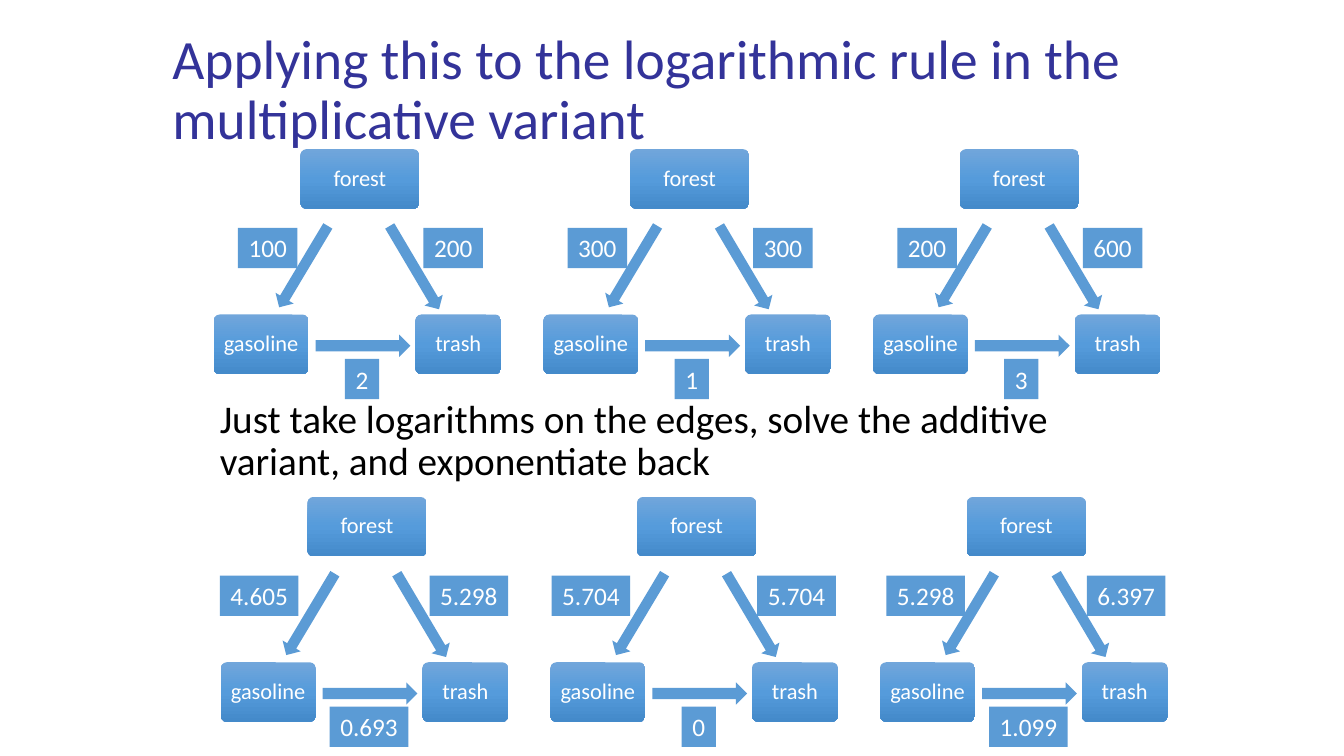
from copy import deepcopy
from dataclasses import dataclass

from pptx import Presentation
from pptx.dml.color import RGBColor as RGB
from pptx.enum.shapes import MSO_SHAPE as Shape
from pptx.enum.text import MSO_ANCHOR as Anchor, MSO_AUTO_SIZE as AutoSize, PP_ALIGN as Align
from pptx.oxml.ns import qn
from pptx.util import Inches, Pt


@dataclass(frozen=True)
class Theme:
    font: str = "Calibri"
    heading: RGB = RGB(0x33, 0x33, 0x99)
    ink: RGB = RGB(0, 0, 0)
    light: RGB = RGB(0xFF, 0xFF, 0xFF)
    blue: RGB = RGB(0x5B, 0x9B, 0xD5)
    gradient: tuple = (
        (0, RGB(0x71, 0xA6, 0xDB)),
        (0.5, RGB(0x55, 0x9B, 0xDB)),
        (1, RGB(0x44, 0x8A, 0xCA)),
    )
    heading_size: float = 39.6
    body_size: float = 28
    weight_size: float = 18
    node_size: float = 16


THEME = Theme()
PITCH = 3.27
WEIGHT_WIDTHS = {1: 0.34, 3: 0.59, 5: 0.78}
NODES = (
    ("forest", 0.86, 0, 1.18),
    ("trash", 2, 1.64, 0.85),
    ("gasoline", 0, 1.64, 0.94),
)
EDGES = (
    (1.51, 1.07, 0.96, 0.21, 59.4),
    (1.01, 1.84, 0.94, 0.22, 0),
    (0.42, 1.06, 0.94, 0.21, 120.9),
)
ROWS = (
    (2.12, 1.48, (
        (("100", 0.24), ("200", 2.08), "2"),
        (("300", 0.24), ("300", 2.08), "1"),
        (("200", 0.24), ("600", 2.08), "3"),
    )),
    (2.19, 4.93, (
        (("4.605", -0.01), ("5.298", 2.07), "0.693"),
        (("5.704", 0.01), ("5.704", 2.05), "0"),
        (("5.298", 0.06), ("6.397", 2.05), "1.099"),
    )),
)


def write(frame, text, size, color, align=Align.LEFT, anchor=Anchor.MIDDLE, inset=0, spacing=0.9):
    frame.text = text
    frame.auto_size = AutoSize.NONE
    frame.vertical_anchor = anchor
    frame.margin_left = frame.margin_right = Inches(inset)
    frame.margin_top = frame.margin_bottom = Inches(min(inset, 0.05))
    paragraph = frame.paragraphs[0]
    paragraph.alignment = align
    paragraph.line_spacing = spacing
    font = paragraph.runs[0].font
    font.name, font.size, font.color.rgb = THEME.font, Pt(size), color


def add_plain(slide, kind, left, top, width, height):
    plain = slide.shapes.add_shape(kind, Inches(left), Inches(top), Inches(width), Inches(height))
    plain.shadow.inherit = False
    plain.line.fill.background()
    plain.fill.solid()
    plain.fill.fore_color.rgb = THEME.blue
    return plain


def add_node(slide, name, left, top, width):
    node = add_plain(slide, Shape.ROUNDED_RECTANGLE, left, top, width, 0.59)
    node.adjustments[0] = 0.1
    node.fill.gradient()
    node.fill.gradient_angle = 270
    stops = node._element.spPr.find(".//" + qn("a:gsLst"))
    stops.append(deepcopy(stops[-1]))
    for stop, (position, color) in zip(node.fill.gradient_stops, THEME.gradient):
        stop.position, stop.color.rgb = position, color
    node.text_frame.word_wrap = False
    write(node.text_frame, name, THEME.node_size, THEME.light, Align.CENTER, inset=0.07)


def add_weight(slide, value, left, top):
    weight = add_plain(slide, Shape.RECTANGLE, left, top, WEIGHT_WIDTHS[len(value)], 0.4)
    weight.text_frame.word_wrap = False
    write(weight.text_frame, value, THEME.weight_size, THEME.light,
          Align.CENTER, inset=0.1, spacing=1)


def add_triangle(slide, left, top, weights):
    for name, x, y, width in NODES:
        add_node(slide, name, left + x, top + y, width)
    for x, y, width, height, angle in EDGES:
        add_plain(slide, Shape.RIGHT_ARROW, left + x, top + y, width, height).rotation = angle
    *sides, base = weights
    for value, x in sides:
        add_weight(slide, value, left + x, top + 0.78)
    add_weight(slide, base, left + 1.47 - WEIGHT_WIDTHS[len(base)] / 2, top + 2.08)


def add_heading(slide, left, top, width, height):
    heading = slide.shapes.title
    heading.left, heading.top = Inches(left), Inches(top)
    heading.width, heading.height = Inches(width), Inches(height)
    write(heading.text_frame,
          "Applying this to the logarithmic rule in the multiplicative variant",
          THEME.heading_size, THEME.heading)


def add_explanation(slide, left, top, width, height):
    explanation = slide.shapes.add_textbox(Inches(left), Inches(top), Inches(width), Inches(height))
    explanation.text_frame.word_wrap = True
    write(explanation.text_frame,
          "Just take logarithms on the edges, solve the additive variant, and exponentiate back",
          THEME.body_size, THEME.ink, anchor=Anchor.TOP)


def main():
    deck = Presentation()
    deck.slide_width, deck.slide_height = Inches(13.33), Inches(7.5)
    slide = deck.slides.add_slide(deck.slide_layouts[5])
    add_heading(slide, 1.71, 0.36, 10, 1.09)
    add_explanation(slide, 2.18, 3.96, 9.24, 1.33)
    for left, top, triangles in ROWS:
        for column, weights in enumerate(triangles):
            add_triangle(slide, left + column * PITCH, top, weights)
    deck.save("out.pptx")


if __name__ == "__main__":
    main()
